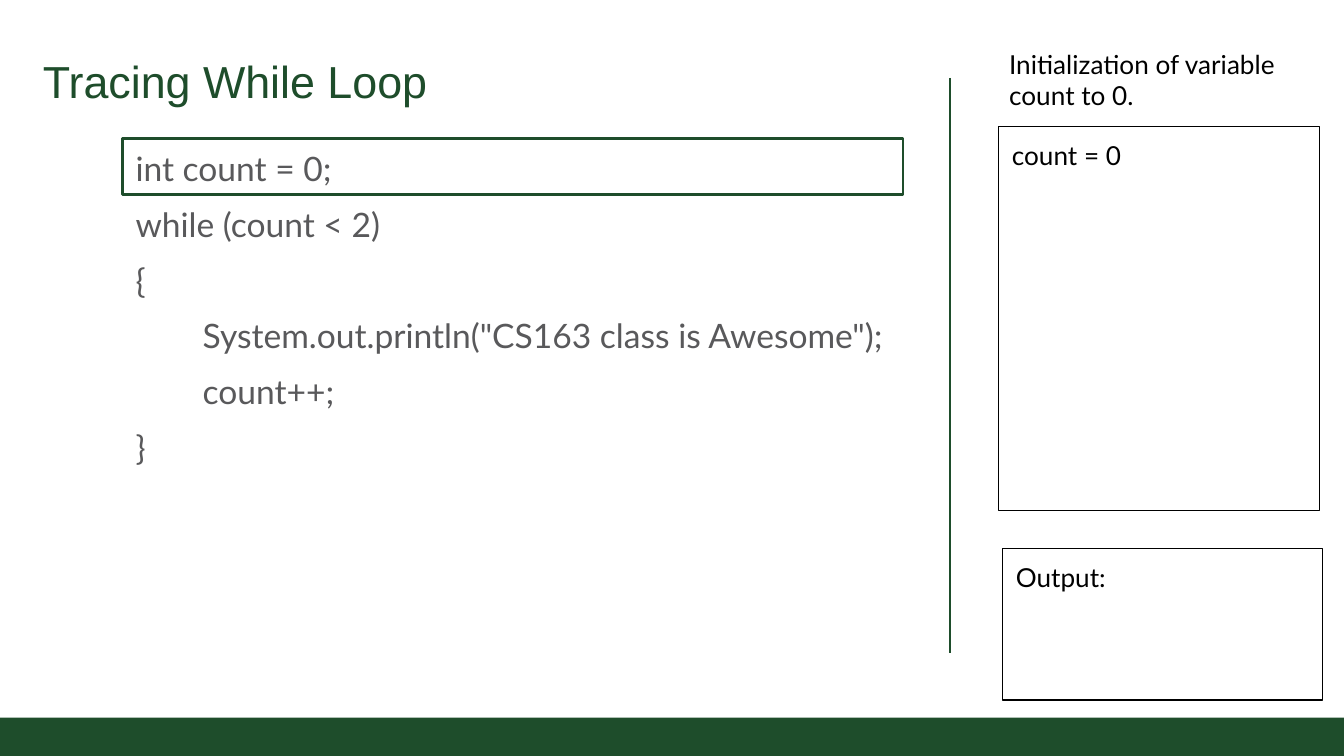
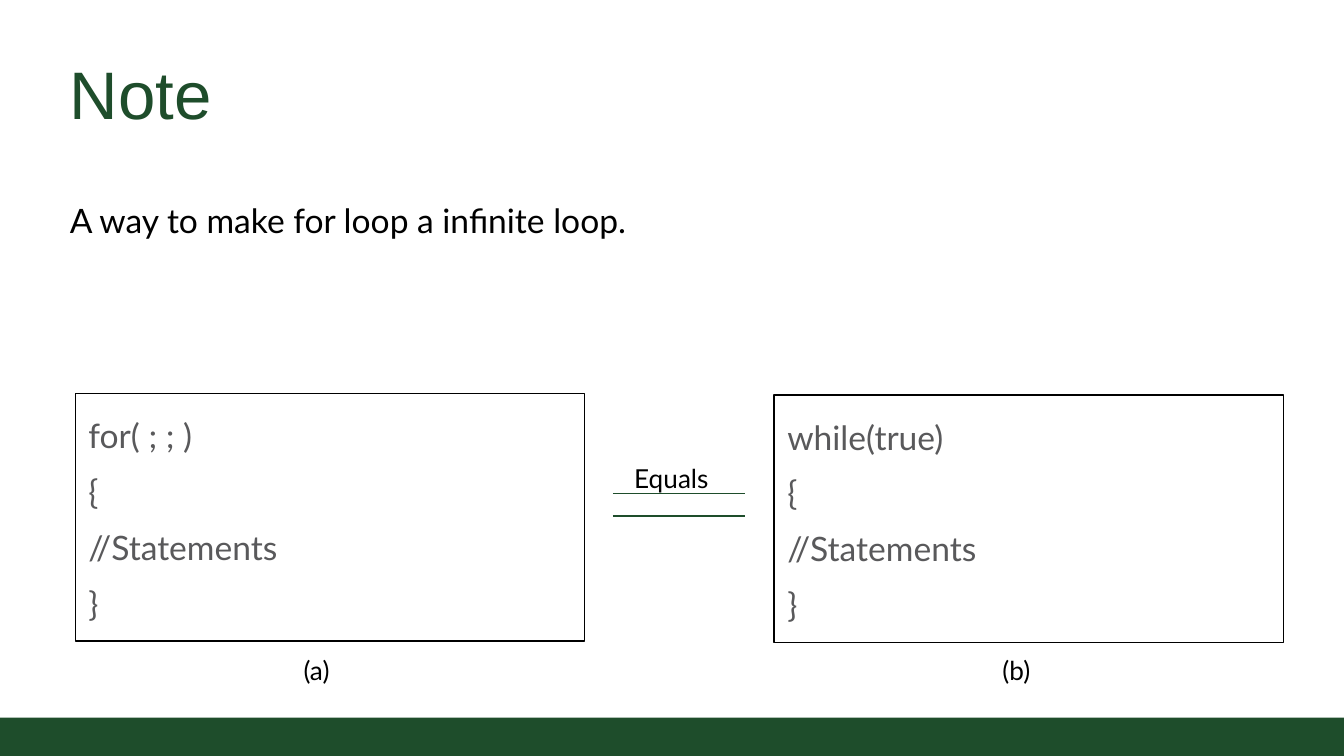
from collections import namedtuple

from lxml.etree import SubElement
from pptx import Presentation
from pptx.dml.color import RGBColor
from pptx.enum.shapes import MSO_CONNECTOR, MSO_SHAPE
from pptx.enum.text import MSO_ANCHOR, PP_ALIGN
from pptx.oxml.ns import qn
from pptx.util import Inches, Pt

GREEN = RGBColor(0x1E, 0x4D, 0x2B)
GRAY = RGBColor(0x59, 0x59, 0x5B)
BLACK = RGBColor(0, 0, 0)

Box = namedtuple("Box", "left top width height")
Style = namedtuple("Style", "font size color spacing before inset anchor",
                   defaults=(1.0, 0, 0.1, MSO_ANCHOR.TOP))

LABEL = Style("Lato", 14, BLACK)
CODE = Style("Lato", 18, GRAY, 1.2, 4)
BODY = Style("Lato", 18, BLACK, 1.2, inset=0.07)
TITLE = Style("Arial", 24, GREEN, inset=0.07, anchor=MSO_ANCHOR.BOTTOM)
NOTE_TITLE = TITLE._replace(size=36)

SLIDE_WIDTH = Inches(10)
SLIDE_HEIGHT = SLIDE_WIDTH * 9 // 16
BAND = Box(0, 5.34, 10.02, 0.29)
CODE_INDENT = 0.5


def to_emu(box):
    return [Inches(length) for length in box]


def write(holder, lines, style, indented=()):
    frame = holder.text_frame
    frame.text = "\n".join(lines)
    frame.word_wrap = True
    frame.vertical_anchor = style.anchor
    frame.margin_left = frame.margin_right = Inches(style.inset)
    frame.margin_top = frame.margin_bottom = Inches(style.inset)
    for row, paragraph in enumerate(frame.paragraphs):
        paragraph.alignment = PP_ALIGN.LEFT
        paragraph.line_spacing = style.spacing
        if row and style.before:
            paragraph.space_before = Pt(style.before)
        if row in indented:
            properties = paragraph._p.get_or_add_pPr()
            properties.set("marL", str(Inches(CODE_INDENT)))
            properties.set("indent", "0")
        for run in paragraph.runs:
            run.font.name = style.font
            run.font.size = Pt(style.size)
            run.font.color.rgb = style.color


def add_text(slide, box, lines, style, indented=()):
    write(slide.shapes.add_textbox(*to_emu(box)), lines, style, indented)


def add_frame(slide, box, color=BLACK, weight=0.75):
    frame = slide.shapes.add_shape(MSO_SHAPE.RECTANGLE, *to_emu(box))
    frame.shadow.inherit = False
    frame.fill.background()
    frame.line.color.rgb = color
    frame.line.width = Pt(weight)
    return frame


def add_panel(slide, box, lines, style):
    write(add_frame(slide, box), lines, style)


def add_rule(slide, box):
    rule = slide.shapes.add_connector(
        MSO_CONNECTOR.STRAIGHT,
        *to_emu((box.left, box.top, box.left + box.width, box.top + box.height)))
    rule.line.color.rgb = GREEN
    rule.line.width = Pt(0.75)
    SubElement(rule._element.spPr, qn("a:effectLst"))


def add_base(deck, title, box, style):
    slide = deck.slides.add_slide(deck.slide_layouts[6])
    band = slide.shapes.add_shape(MSO_SHAPE.RECTANGLE, *to_emu(BAND))
    band.shadow.inherit = False
    band.fill.solid()
    band.fill.fore_color.rgb = GREEN
    band.line.fill.background()
    add_text(slide, box, [title], style)
    return slide


def add_traced_code(slide, box, lines, indented):
    add_text(slide, box, lines, CODE, indented)
    current_step = Box(box.left, box.top + 0.09, box.width - 0.24, 0.42)
    add_frame(slide, current_step, GREEN, 1.5)


def add_trace_sidebar(slide, box, explanation, variables, output):
    left, top, width, height = box
    add_text(slide, Box(left, top, width, 0.67), [explanation], LABEL)
    add_panel(slide, Box(left + 0.02, top + 0.68, 2.39, 2.86), [variables], LABEL)
    add_panel(slide, Box(left + 0.05, top + height - 1.13, 2.38, 1.13), [output], LABEL)


def add_loop_example(slide, box, header, caption):
    add_panel(slide, box, [header, "{", "//Statements", "}"], CODE)
    add_text(slide, Box(box.left + 1.6, 4.77, 0.58, 0.67), [caption], LABEL)


def add_equals_sign(slide, box):
    for offset in (0, box.height):
        add_rule(slide, Box(box.left, box.top + offset, box.width, 0))
    add_text(slide, Box(box.left + 0.06, box.top - 0.33, box.width, 0.33),
             ["Equals"], LABEL)


def build_tracing_slide(deck):
    slide = add_base(deck, "Tracing While Loop", Box(0.25, 0.14, 5.37, 0.73), TITLE)
    code = ["int count = 0;", "while (count < 2)", "{",
            'System.out.println("CS163 class is Awesome");', "count++;", "}"]
    add_traced_code(slide, Box(0.91, 0.94, 6.05, 3.24), code, indented=(3, 4))
    add_rule(slide, Box(7.07, 0.58, 0, 4.28))
    add_trace_sidebar(slide, Box(7.41, 0.26, 2.49, 4.95),
                      "Initialization of variable count to 0.", "count = 0", "Output:")


def build_note_slide(deck):
    slide = add_base(deck, "Note", Box(0.45, 0.33, 9.09, 0.73), NOTE_TITLE)
    add_text(slide, Box(0.45, 1.36, 9.09, 0.83),
             ["A way to make for loop a infinite loop."], BODY)
    add_loop_example(slide, Box(0.56, 2.93, 3.79, 1.84), "for( ; ; )", "(a)")
    add_loop_example(slide, Box(5.76, 2.94, 3.79, 1.84), "while(true)", "(b)")
    add_equals_sign(slide, Box(4.56, 3.67, 0.98, 0.17))


def main():
    deck = Presentation()
    deck.slide_width = SLIDE_WIDTH
    deck.slide_height = SLIDE_HEIGHT
    build_tracing_slide(deck)
    build_note_slide(deck)
    deck.save("out.pptx")


if __name__ == "__main__":
    main()
